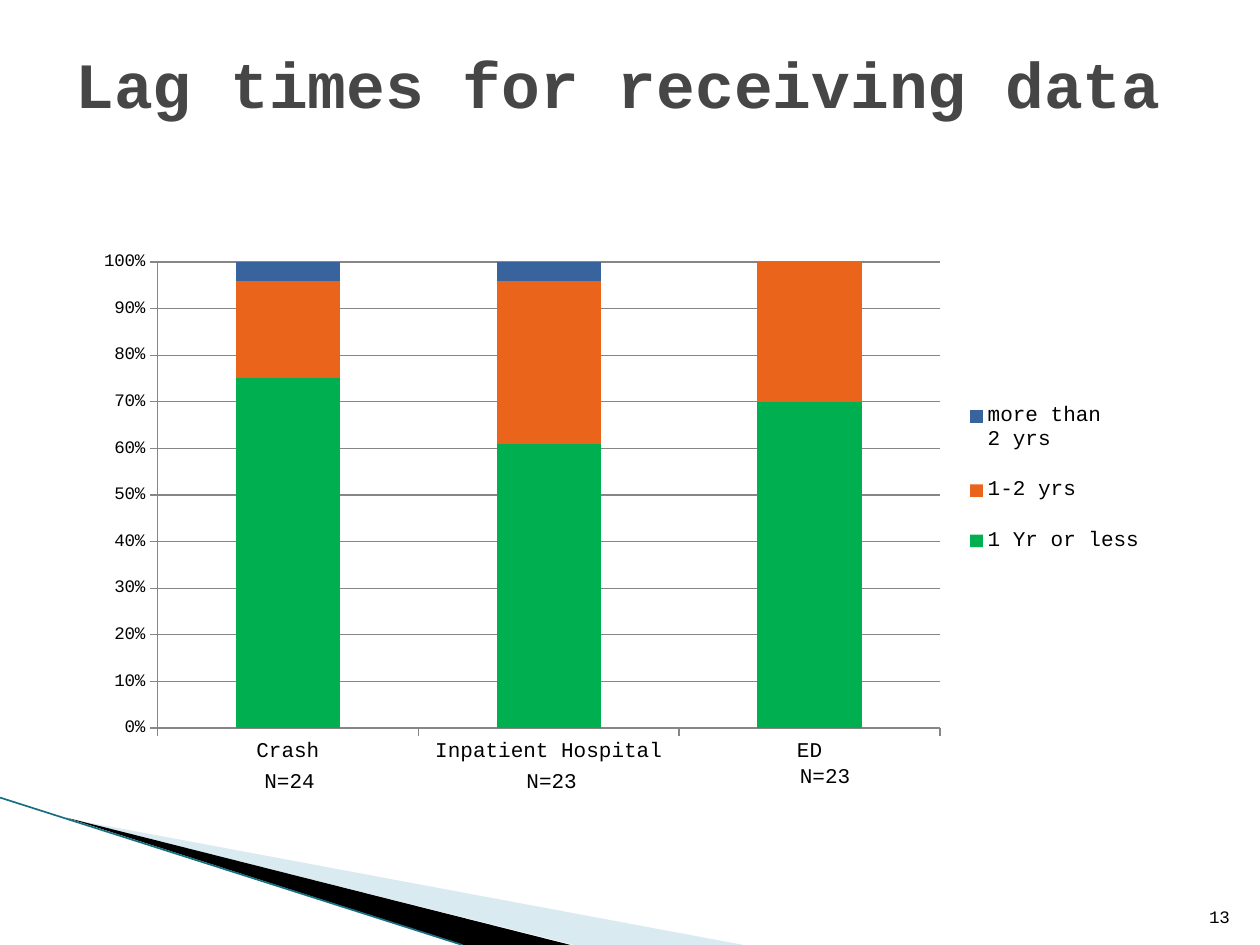
from lxml import etree
from pptx import Presentation
from pptx.chart.data import CategoryChartData
from pptx.dml.color import RGBColor
from pptx.enum.chart import XL_CHART_TYPE, XL_LEGEND_POSITION, XL_TICK_MARK
from pptx.enum.shapes import MSO_CONNECTOR
from pptx.enum.text import MSO_ANCHOR, PP_ALIGN
from pptx.oxml.ns import qn
from pptx.util import Inches, Pt

STACKED_100 = XL_CHART_TYPE.COLUMN_STACKED_100
LEGEND_RIGHT = XL_LEGEND_POSITION.RIGHT
TICK_OUTSIDE = XL_TICK_MARK.OUTSIDE
STRAIGHT = MSO_CONNECTOR.STRAIGHT
TOP, BOTTOM = MSO_ANCHOR.TOP, MSO_ANCHOR.BOTTOM
LEFT, RIGHT = PP_ALIGN.LEFT, PP_ALIGN.RIGHT

FONT = "Courier New"
BLACK = RGBColor(0x00, 0x00, 0x00)
TITLE_GRAY = RGBColor(0x46, 0x46, 0x46)
AXIS_GRAY = RGBColor(0x86, 0x86, 0x86)
PALE_BLUE = RGBColor(0xA0, 0xCB, 0xDC)
TEAL = RGBColor(0x17, 0x70, 0x82)
GREEN = RGBColor(0x00, 0xB0, 0x50)
ORANGE = RGBColor(0xEB, 0x64, 0x1B)
BLUE = RGBColor(0x39, 0x63, 0x9D)

TITLE = "Lag times for receiving data"
PAGE_NUMBER = "13"
SOURCES = ["Crash", "Inpatient Hospital", "ED"]
LAGS = [
    ("1 Yr or less", (75, 61, 70), GREEN),
    ("1-2 yrs", (21, 35, 30), ORANGE),
    ("more than \n2 yrs", (4, 4, 0), BLUE),
]
# text, left, top, width
SAMPLE_SIZES = [
    ("N=24", 2, 6.04, 0.75),
    ("N=23", 4.08, 6.04, 0.83),
    ("N=23", 6.25, 6, 0.92),
]
# corners, fill, opacity in percent
WEDGES = [
    ([(0.55, 6.5), (5.9, 7.5), (4.56, 7.5)], PALE_BLUE, 40),
    ([(0.53, 6.49), (4.53, 7.5), (3.68, 7.5)], BLACK, 100),
]
EDGE = [(0, 6.33), (3.67, 7.5)]
CHART_BOX = (0.67, 1.92, 8.5, 4.24)
PLOT_BOX = (1.25, 2.08, 6.21, 3.7)
LEGEND_BOX = (7.57, 3, 1.6, 1.6)


def style_font(font, size, color=BLACK, bold=False):
    font.name, font.size, font.bold = FONT, Pt(size), bold
    font.color.rgb = color


def add_text(slide, text, box, size, color=BLACK, bold=False, anchor=TOP, align=LEFT):
    frame = slide.shapes.add_textbox(*map(Inches, box)).text_frame
    frame.word_wrap = True
    frame.vertical_anchor = anchor
    frame.text = text
    paragraph = frame.paragraphs[0]
    paragraph.alignment = align
    style_font(paragraph.runs[0].font, size, color, bold)


def add_wedge(slide, corners, color, opacity):
    start, *rest = [(Inches(x), Inches(y)) for x, y in corners]
    builder = slide.shapes.build_freeform(*start)
    builder.add_line_segments(rest, close=True)
    wedge = builder.convert_to_shape()
    wedge.shadow.inherit = False
    wedge.fill.solid()
    wedge.fill.fore_color.rgb = color
    wedge.line.fill.background()
    if opacity < 100:
        rgb = wedge.fill._xPr.find(".//" + qn("a:srgbClr"))
        etree.SubElement(rgb, qn("a:alpha"), val=str(opacity * 1000))


def add_edge(slide):
    ends = [Inches(value) for point in EDGE for value in point]
    edge = slide.shapes.add_connector(STRAIGHT, *ends)
    edge.line.color.rgb = TEAL
    edge.line.width = Pt(0.95)
    etree.SubElement(edge._element.spPr, qn("a:effectLst"))


def manual_layout(box, inner=False):
    """Return a c:layout placing box, in slide inches, inside the chart."""
    left, top, width, height = CHART_BOX
    x, y, w, h = box
    layout = etree.Element(qn("c:layout"))
    manual = etree.SubElement(layout, qn("c:manualLayout"))
    settings = [("layoutTarget", "inner")] if inner else []
    settings += [("xMode", "edge"), ("yMode", "edge"),
                 ("x", (x - left) / width), ("y", (y - top) / height),
                 ("w", w / width), ("h", h / height)]
    for tag, value in settings:
        etree.SubElement(manual, qn("c:" + tag), val=str(value))
    return layout


def add_lag_chart(slide):
    data = CategoryChartData(number_format="General")
    data.categories = SOURCES
    for name, shares, _ in LAGS:
        data.add_series(name, shares)
    chart = slide.shapes.add_chart(STACKED_100, *map(Inches, CHART_BOX), data).chart
    chart.has_title = False
    style_font(chart.font, 10)

    plot = chart.plots[0]
    plot.gap_width, plot.overlap = 150, 100
    plot.vary_by_categories = False
    for series, (_, _, color) in zip(plot.series, LAGS):
        series.format.fill.solid()
        series.format.fill.fore_color.rgb = color

    shares_axis = chart.value_axis
    for axis, size in ((chart.category_axis, 12), (shares_axis, 10)):
        axis.major_tick_mark = TICK_OUTSIDE
        axis.format.line.color.rgb = AXIS_GRAY
        style_font(axis.tick_labels.font, size)
    shares_axis.minimum_scale, shares_axis.maximum_scale = 0, 1
    shares_axis.major_unit = 0.1
    shares_axis.tick_labels.number_format = "0%"
    shares_axis.tick_labels.number_format_is_linked = False
    shares_axis.has_major_gridlines = True
    shares_axis.major_gridlines.format.line.color.rgb = AXIS_GRAY

    chart.has_legend = True
    legend = chart.legend
    legend.position = LEGEND_RIGHT
    legend.include_in_layout = False
    style_font(legend.font, 12)

    plot_area = chart._chartSpace.find(".//" + qn("c:plotArea"))
    for part in (plot_area, legend._element):
        for layout in part.findall(qn("c:layout")):
            part.remove(layout)
    plot_area.insert(0, manual_layout(PLOT_BOX, inner=True))
    legend._element.find(qn("c:legendPos")).addnext(manual_layout(LEGEND_BOX))


def main():
    prs = Presentation()
    prs.slide_width, prs.slide_height = Inches(10), Inches(7.5)
    slide = prs.slides.add_slide(prs.slide_layouts[6])
    for wedge in WEDGES:
        add_wedge(slide, *wedge)
    add_edge(slide)
    add_text(slide, PAGE_NUMBER, (9.46, 7.01, 0.4, 0.4), 10, anchor=BOTTOM, align=RIGHT)
    add_text(slide, TITLE, (0.5, 0.3, 9.25, 1.25), 36.9, TITLE_GRAY, bold=True)
    add_lag_chart(slide)
    for text, left, top, width in SAMPLE_SIZES:
        add_text(slide, text, (left, top, width, 0.3), 12)
    prs.save("out.pptx")


if __name__ == "__main__":
    main()
